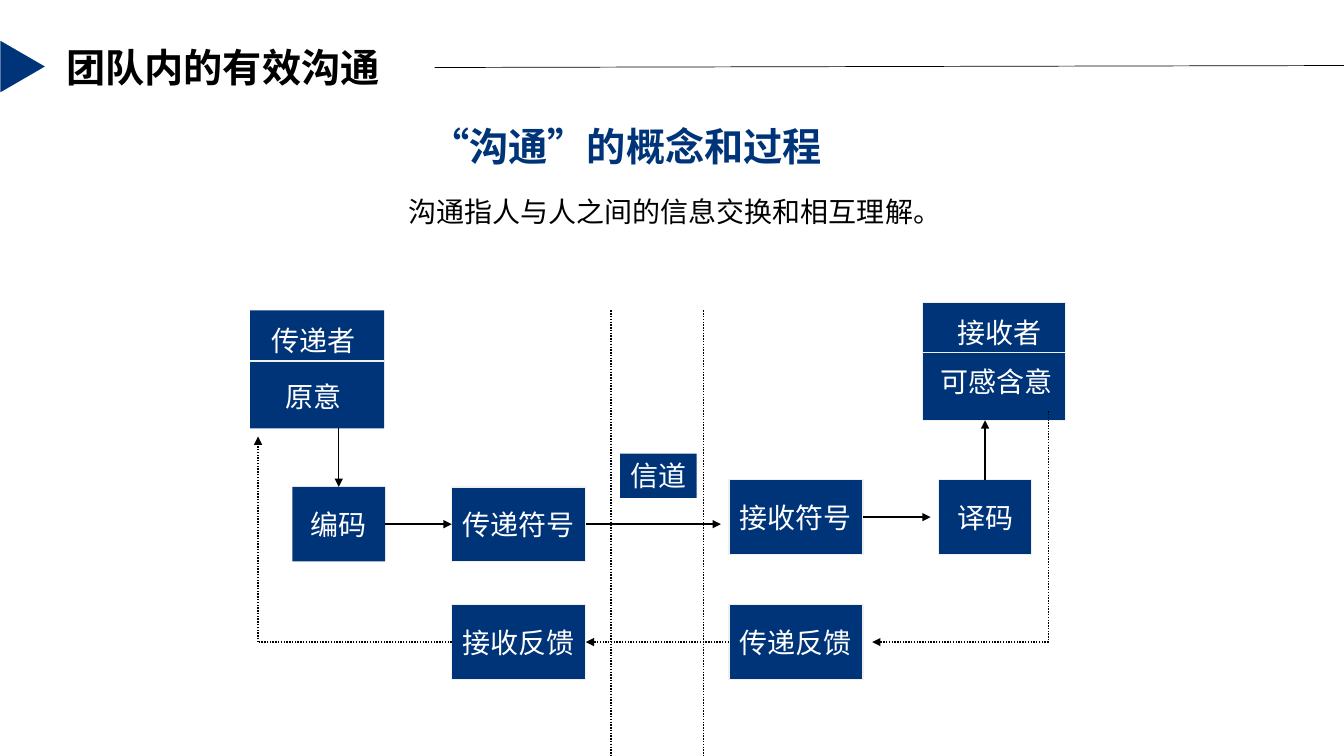
from dataclasses import dataclass
from typing import Optional

from pptx import Presentation
from pptx.dml.color import RGBColor
from pptx.enum.dml import MSO_LINE
from pptx.enum.shapes import MSO_CONNECTOR, MSO_SHAPE
from pptx.enum.text import MSO_ANCHOR, PP_ALIGN
from pptx.oxml.ns import qn
from pptx.shapes.autoshape import Shape
from pptx.slide import Slide
from pptx.text.text import TextFrame
from pptx.util import Inches, Pt

RECTANGLE, TRIANGLE = MSO_SHAPE.RECTANGLE, MSO_SHAPE.ISOSCELES_TRIANGLE
STRAIGHT, DOTTED = MSO_CONNECTOR.STRAIGHT, MSO_LINE.ROUND_DOT
CENTER, LEFT, MIDDLE, TOP = PP_ALIGN.CENTER, PP_ALIGN.LEFT, MSO_ANCHOR.MIDDLE, MSO_ANCHOR.TOP
SIDE_TOP, SIDE_LEFT, SIDE_BOTTOM, SIDE_RIGHT = 0, 1, 2, 3

NAVY, BLACK, WHITE, PALE = "003479", "000000", "FFFFFF", "F0F0F0"
BODY_FONT, HEADING_FONT = "Noto Sans CJK SC", "Noto Sans CJK JP"
WIDE, NARROW, TALL, FLAT = 1.33, 0.92, 1.17, 0.74
UPPER_ROW, LOWER_ROW = 4.83, 6.0
RECEIVING_ROW = 4.76
FEEDBACK_Y = LOWER_ROW + FLAT / 2


@dataclass(frozen=True)
class Block:
    name: str
    left: float
    top: float
    width: float
    height: float
    text: str = ""
    outlined: bool = True


@dataclass(frozen=True)
class Label:
    text: str
    left: float
    top: float
    width: float
    height: float = 0.44
    size: int = 20
    color: str = WHITE
    font: str = BODY_FONT
    bold: bool = False


@dataclass(frozen=True)
class Joint:
    block: str
    side: int


@dataclass(frozen=True)
class Link:
    start: tuple[float, float]
    end: tuple[float, float]
    color: str = BLACK
    weight: float = 1
    dotted: bool = False
    arrow: bool = False
    start_joint: Optional[Joint] = None
    end_joint: Optional[Joint] = None


BLOCKS = [
    Block("sender", 2.48, 3.08, WIDE, TALL, outlined=False),
    Block("encoding", 2.9, UPPER_ROW, NARROW, FLAT, "编码", False),
    Block("sent symbol", 4.48, UPPER_ROW, WIDE, FLAT, "传递符号"),
    Block("received feedback", 4.48, LOWER_ROW, WIDE, FLAT, "接收反馈"),
    Block("received symbol", 7.23, RECEIVING_ROW, WIDE, FLAT, "接收符号"),
    Block("sent feedback", 7.23, LOWER_ROW, WIDE, FLAT, "传递反馈"),
    Block("receiver", 9.15, 3, 1.42, TALL),
    Block("decoding", 9.31, RECEIVING_ROW, NARROW, FLAT, "译码"),
    Block("channel", 6.15, 4.5, 0.76, 0.44, "信道", False),
]

LINKS = [
    Link((4.31, 0.67), (13.33, 0.65), weight=0.5),
    Link((2.48, 3.58), (3.81, 3.58), PALE),
    Link((9.15, 3.5), (10.57, 3.5), PALE),
    *(Link((x, 3.08), (x, 7.5), dotted=True) for x in (6.06, 6.98)),
    Link((3.36, 4.25), (3.36, 4.83), arrow=True, end_joint=Joint("encoding", SIDE_TOP)),
    Link((3.82, 5.2), (4.48, 5.2), arrow=True,
         start_joint=Joint("encoding", SIDE_RIGHT), end_joint=Joint("sent symbol", SIDE_LEFT)),
    Link((5.81, 5.2), (7.15, 5.2), arrow=True, start_joint=Joint("sent symbol", SIDE_RIGHT)),
    Link((8.56, 5.13), (9.23, 5.13), arrow=True,
         start_joint=Joint("received symbol", SIDE_RIGHT)),
    Link((9.77, 4.76), (9.77, 4.17), arrow=True, start_joint=Joint("decoding", SIDE_TOP)),
    Link((10.4, 4.08), (10.4, FEEDBACK_Y), dotted=True),
    Link((10.4, FEEDBACK_Y), (8.65, FEEDBACK_Y), dotted=True, arrow=True),
    Link((7.23, FEEDBACK_Y), (5.81, FEEDBACK_Y), dotted=True, arrow=True,
         start_joint=Joint("sent feedback", SIDE_LEFT),
         end_joint=Joint("received feedback", SIDE_RIGHT)),
    Link((4.48, FEEDBACK_Y), (2.56, FEEDBACK_Y), dotted=True,
         start_joint=Joint("received feedback", SIDE_LEFT)),
    Link((2.56, FEEDBACK_Y), (2.56, 4.33), dotted=True, arrow=True),
]

LABELS = [
    Label("团队内的有效沟通", 0.56, 0.38, 3.75, 0.57, 28, BLACK, HEADING_FONT, True),
    Label("沟通指人与人之间的信息交换和相互理解。", 3.95, 1.88, 5.53, color=BLACK),
    Label("传递者", 2.59, 3.16, 1.04),
    Label("原意", 2.73, 3.72, 0.76),
    Label("接收者", 9.4, 3.08, 1.04),
    Label("可感含意", 9.23, 3.57, 1.56),
]


def rgb(value: str) -> RGBColor:
    return RGBColor.from_string(value)


def write(frame: TextFrame, text: str, size: int, color: str, font: str = BODY_FONT,
          bold: bool = False, align: PP_ALIGN = CENTER, anchor: MSO_ANCHOR = MIDDLE) -> None:
    frame.text = text
    frame.vertical_anchor = anchor
    para = frame.paragraphs[0]
    para.alignment = align
    span = para.runs[0]
    span.font.size, span.font.bold, span.font.name = Pt(size), bold, font
    span.font.color.rgb = rgb(color)
    properties = span.font._element
    properties.set("lang", "zh-CN")
    east_asian = properties.makeelement(qn("a:ea"), {"typeface": font})
    properties.find(qn("a:latin")).addnext(east_asian)


def add_title(page: Slide) -> None:
    title = page.shapes.title
    title.left, title.top = Inches(3.11), Inches(1.29)
    title.width, title.height = Inches(6.2), Inches(0.37)
    write(title.text_frame, "“沟通”的概念和过程", 28, NAVY, bold=True)
    title.text_frame.paragraphs[0].line_spacing = 0.9


def add_block(page: Slide, block: Block, preset: MSO_SHAPE = RECTANGLE) -> Shape:
    box = page.shapes.add_shape(preset, Inches(block.left), Inches(block.top),
                                Inches(block.width), Inches(block.height))
    box.shadow.inherit = False
    box.fill.solid()
    box.fill.fore_color.rgb = rgb(NAVY)
    if block.outlined:
        box.line.color.rgb = rgb(PALE)
        box.line.width = Pt(1)
    else:
        box.line.fill.background()
    if block.text:
        box.text_frame.word_wrap = False
        write(box.text_frame, block.text, 20, WHITE)
    return box


def add_link(page: Slide, link: Link, boxes: dict[str, Shape]) -> None:
    ends = [Inches(length) for length in (*link.start, *link.end)]
    connector = page.shapes.add_connector(STRAIGHT, *ends)
    if link.start_joint:
        connector.begin_connect(boxes[link.start_joint.block], link.start_joint.side)
    if link.end_joint:
        connector.end_connect(boxes[link.end_joint.block], link.end_joint.side)
    connector.line.color.rgb = rgb(link.color)
    connector.line.width = Pt(link.weight)
    if link.dotted:
        connector.line.dash_style = DOTTED
    properties = connector._element.spPr
    if link.arrow:
        outline = properties.find(qn("a:ln"))
        outline.append(outline.makeelement(qn("a:tailEnd"), {"type": "triangle"}))
    properties.append(properties.makeelement(qn("a:effectLst"), {}))


def add_label(page: Slide, label: Label) -> None:
    box = page.shapes.add_textbox(Inches(label.left), Inches(label.top),
                                  Inches(label.width), Inches(label.height))
    box.text_frame.word_wrap = False
    write(box.text_frame, label.text, label.size, label.color, label.font, label.bold, LEFT, TOP)


def main() -> None:
    deck = Presentation()
    deck.slide_width, deck.slide_height = Inches(13.33), Inches(7.5)
    page = deck.slides.add_slide(deck.slide_layouts[5])
    add_title(page)
    marker = add_block(page, Block("marker", -0.03, 0.44, 0.51, 0.44, outlined=False), TRIANGLE)
    marker.rotation = 90
    boxes = {block.name: add_block(page, block) for block in BLOCKS}
    for link in LINKS:
        add_link(page, link, boxes)
    for label in LABELS:
        add_label(page, label)
    deck.save("out.pptx")


if __name__ == "__main__":
    main()
